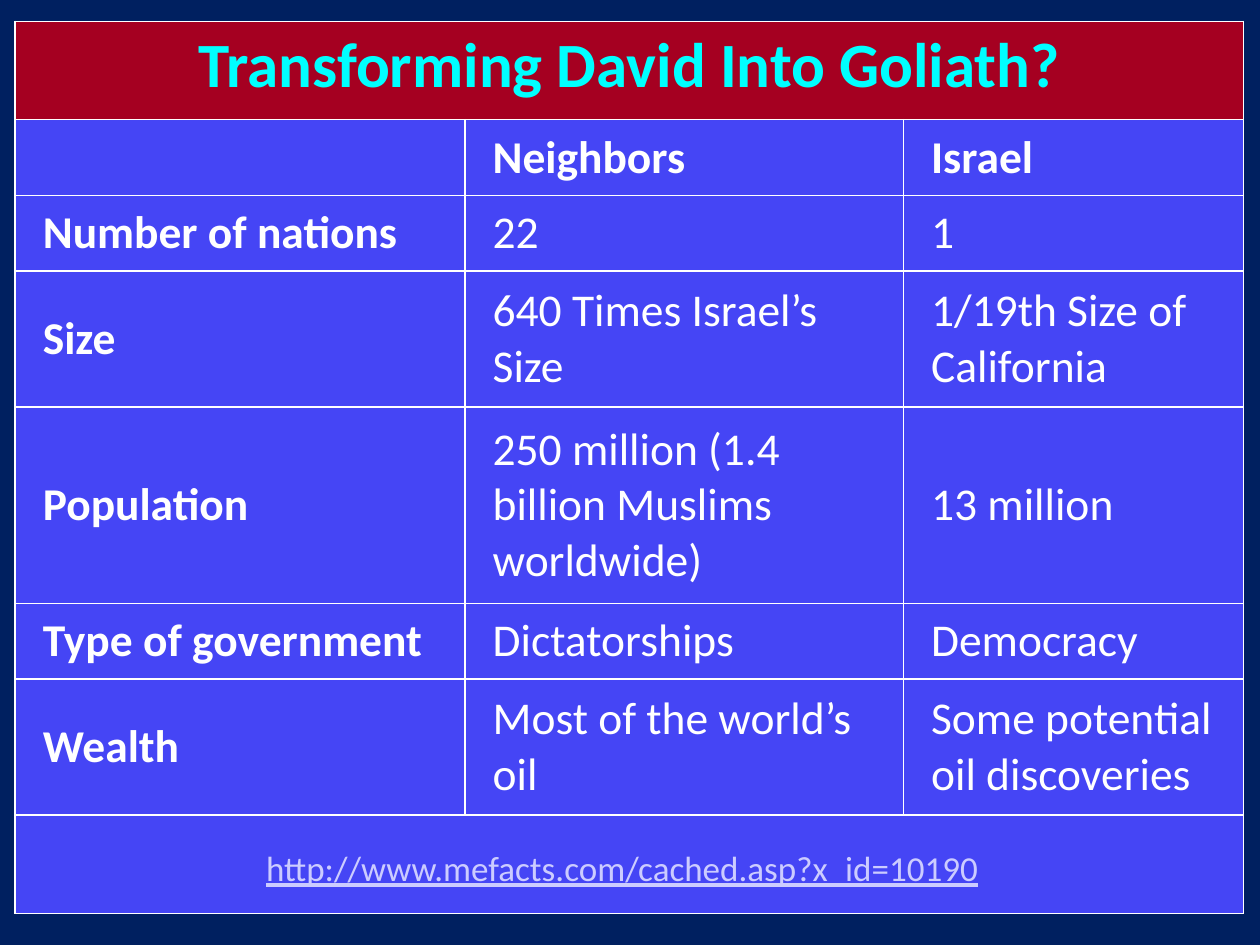
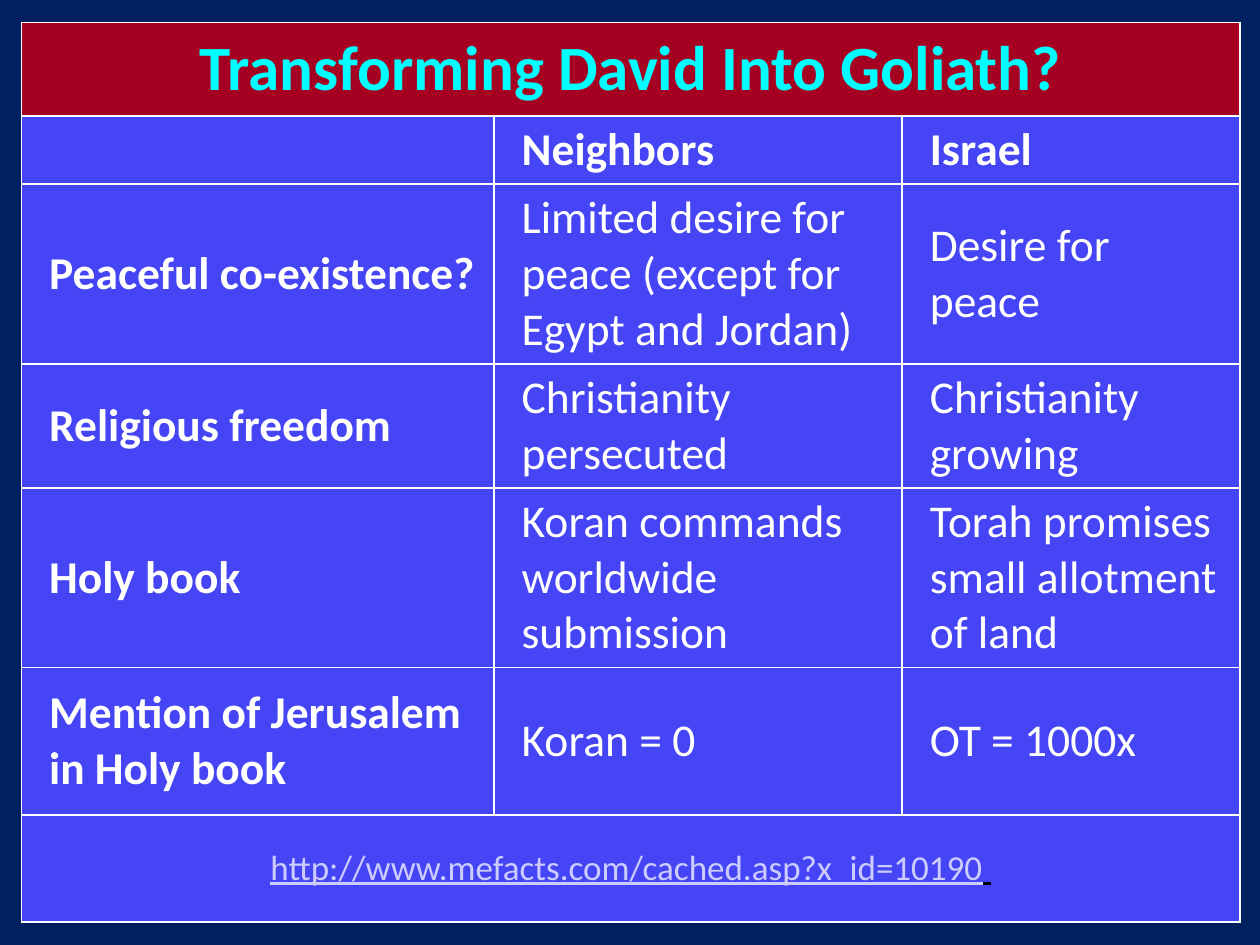
from dataclasses import dataclass

from lxml.etree import SubElement
from pptx import Presentation
from pptx.dml.color import RGBColor
from pptx.enum.text import MSO_ANCHOR, PP_ALIGN
from pptx.oxml.ns import qn
from pptx.util import Inches, Pt


@dataclass(frozen=True)
class Theme:
    """Colours, type sizes and measures that the slides share."""
    back: str = "002060"
    band: str = "A50021"
    body: str = "4545F5"
    title: str = "00FFFF"
    text: str = "FFFFFF"
    link: str = "CCCCFF"
    dark: str = "000000"
    font: str = "Calibri"
    head_pt: int = 36
    body_pt: int = 26
    link_pt: int = 20
    rule_pt: int = 1
    indent: float = 0.12


@dataclass(frozen=True)
class Sheet:
    """One comparison table with its place, sizes and wording."""
    left: float
    top: float
    cols: tuple[float, ...]
    rows: tuple[float, ...]
    facts: tuple[tuple[str, str, str], ...]
    title_at: MSO_ANCHOR
    link_at: MSO_ANCHOR
    tail_pt: int
    tail_ink: str
    tail_line: bool


THEME = Theme()
TITLE = "Transforming David Into Goliath?"
LINK = "http://www.mefacts.com/cached.asp?x_id=10190"
HEADS = ("", "Neighbors", "Israel")

SHEETS = (
    Sheet(
        0.12, 0.17, (3.57, 3.48, 2.7),
        (0.78, 0.6, 0.6, 1.08, 1.56, 0.6, 1.08, 0.78),
        (
            ("Number of nations", "22", "1"),
            ("Size", "640 Times Israel’s Size", "1/19th Size of California"),
            ("Population", "250 million (1.4 billion Muslims worldwide)",
             "13 million"),
            ("Type of government", "Dictatorships", "Democracy"),
            ("Wealth", "Most of the world’s oil",
             "Some potential oil discoveries"),
        ),
        MSO_ANCHOR.TOP, MSO_ANCHOR.TOP, THEME.head_pt, THEME.text, False,
    ),
    Sheet(
        0.17, 0.18, (3.75, 3.24, 2.68),
        (0.74, 0.53, 1.38, 0.95, 1.38, 1.17, 0.85),
        (
            ("Peaceful co-existence?",
             "Limited desire for peace (except for Egypt and Jordan)",
             "Desire for peace"),
            ("Religious freedom", "Christianity persecuted",
             "Christianity growing"),
            ("Holy book", "Koran commands worldwide submission",
             "Torah promises small allotment of land"),
            ("Mention of Jerusalem in Holy book", "Koran = 0", "OT = 1000x"),
        ),
        MSO_ANCHOR.MIDDLE, MSO_ANCHOR.MIDDLE, THEME.link_pt, THEME.dark, True,
    ),
)


def write(cell, text: str, *, size: int = THEME.body_pt,
          ink: str = THEME.text, bold: bool = False, line: bool = False,
          align: PP_ALIGN = PP_ALIGN.LEFT, indent: float = 0,
          anchor: MSO_ANCHOR = MSO_ANCHOR.MIDDLE) -> None:
    """Add a formatted run to the cell's paragraph."""
    cell.vertical_anchor = anchor
    para = cell.text_frame.paragraphs[0]
    para.alignment = align
    props = para._p.get_or_add_pPr()
    props.set("marL", str(Inches(indent)))
    props.set("indent", "0")
    run = para.add_run()
    run.text = text
    font = run.font
    font.name, font.size = THEME.font, Pt(size)
    font.bold, font.underline = bold, line
    font.color.rgb = RGBColor.from_string(ink)


def paint(cell, fill: str) -> None:
    """Give a cell its four rules and its fill."""
    props = cell._tc.get_or_add_tcPr()
    for side in ("lnL", "lnR", "lnT", "lnB"):
        rule = SubElement(props, qn(f"a:{side}"), w=str(Pt(THEME.rule_pt)))
        solid = SubElement(rule, qn("a:solidFill"))
        SubElement(solid, qn("a:srgbClr"), val=THEME.text)
    cell.fill.solid()
    cell.fill.fore_color.rgb = RGBColor.from_string(fill)


def draw(deck, sheet: Sheet) -> None:
    """Add a slide that holds the sheet's table."""
    slide = deck.slides.add_slide(deck.slide_layouts[6])
    slide.background.fill.solid()
    slide.background.fill.fore_color.rgb = RGBColor.from_string(THEME.back)
    last = len(sheet.rows) - 1
    table = slide.shapes.add_table(
        len(sheet.rows), len(sheet.cols), Inches(sheet.left),
        Inches(sheet.top), Inches(sum(sheet.cols)), Inches(sum(sheet.rows)),
    ).table
    table.first_row = table.horz_banding = False
    for col, width in zip(table.columns, sheet.cols):
        col.width = Inches(width)
    for pos, (row, height) in enumerate(zip(table.rows, sheet.rows)):
        row.height = Inches(height)
        for cell in row.cells:
            paint(cell, THEME.body if pos else THEME.band)
    for pos in (0, last):
        table.cell(pos, 0).merge(table.cell(pos, len(sheet.cols) - 1))

    write(table.cell(0, 0), TITLE, size=THEME.head_pt, ink=THEME.title,
          bold=True, align=PP_ALIGN.CENTER, anchor=sheet.title_at)
    for pos, words in enumerate((HEADS, *sheet.facts), 1):
        for col, text in enumerate(words):
            if text:
                write(table.cell(pos, col), text, indent=THEME.indent,
                      bold=pos == 1 or col == 0)
    foot = table.cell(last, 0)
    write(foot, LINK, size=THEME.link_pt, ink=THEME.link, line=True,
          align=PP_ALIGN.CENTER, anchor=sheet.link_at)
    write(foot, " ", size=sheet.tail_pt, ink=sheet.tail_ink,
          line=sheet.tail_line, align=PP_ALIGN.CENTER, anchor=sheet.link_at)


def main() -> None:
    """Build the deck and save it."""
    deck = Presentation()
    deck.slide_width, deck.slide_height = Inches(10), Inches(7.5)
    for sheet in SHEETS:
        draw(deck, sheet)
    deck.save("out.pptx")


if __name__ == "__main__":
    main()
